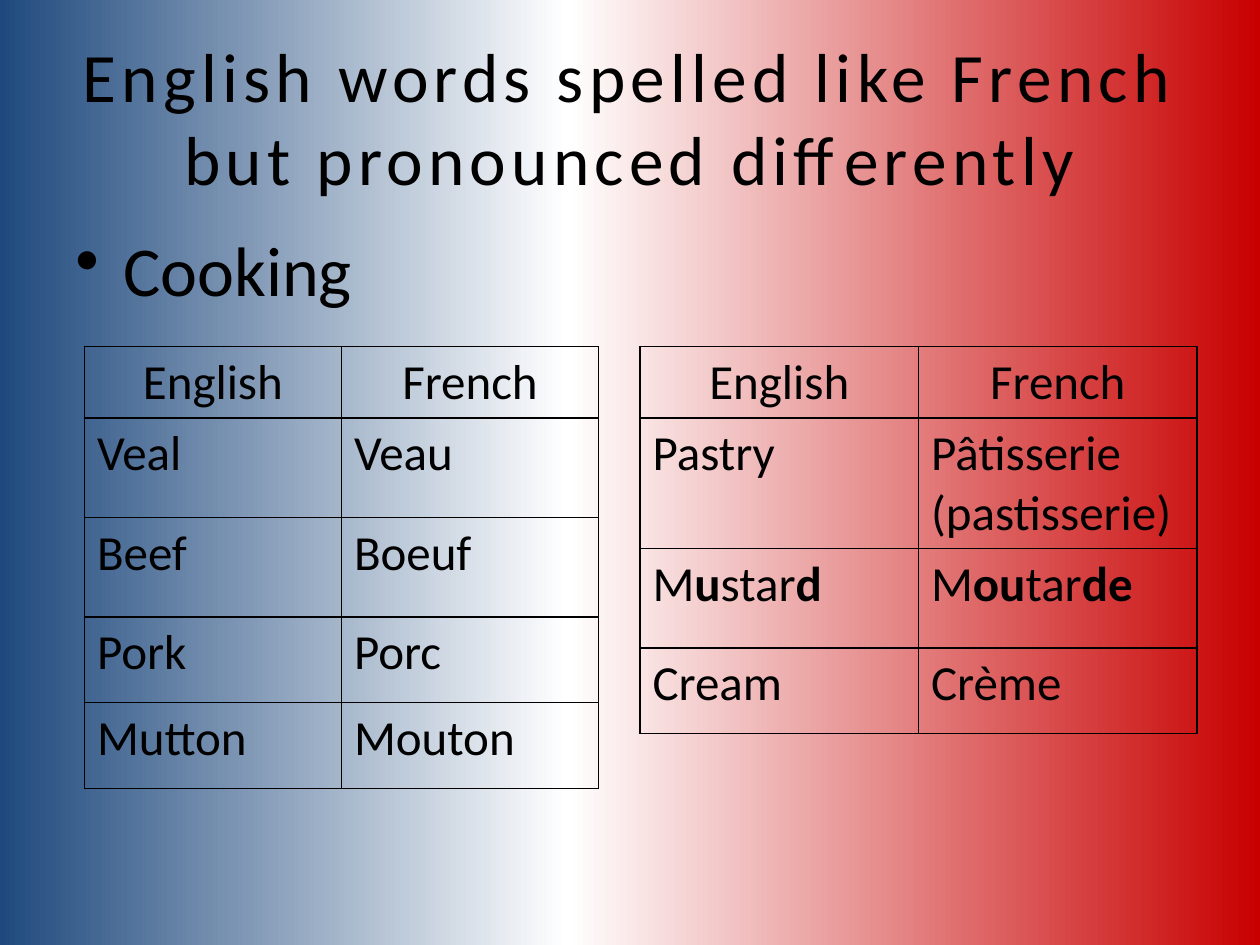
"""Build a slide comparing English and French cooking words."""
from copy import deepcopy

from lxml.etree import SubElement as Sub
from pptx import Presentation
from pptx.dml.color import RGBColor as RGB
from pptx.enum.text import MSO_ANCHOR as Anchor, PP_ALIGN as Align
from pptx.oxml.ns import qn
from pptx.util import Inches, Pt

COLORS = {"blue": "1F497D", "white": "FFFFFF", "red": "C80000", "ink": "000000"}


def style(para, size, align=Align.LEFT):
    para.alignment = align
    para.font.size = Pt(size)
    para.font.name = "Calibri"
    para.font.color.rgb = RGB.from_string(COLORS["ink"])


def border(cell):
    props = cell._tc.get_or_add_tcPr()
    for i, side in enumerate(("lnL", "lnR", "lnT", "lnB")):
        line = props.makeelement(qn(f"a:{side}"), {"w": str(Pt(1))})
        fill = Sub(line, qn("a:solidFill"))
        Sub(fill, qn("a:srgbClr"), val=COLORS["ink"])
        props.insert(i, line)


prs = Presentation()
prs.slide_width, prs.slide_height = Inches(10), Inches(7.5)
slide = prs.slides.add_slide(prs.slide_layouts[6])

back = slide.background.fill
back.gradient()
back.gradient_angle = 0
stops = back._fill._gradFill.gsLst
for extra in list(stops)[2:]:
    stops.remove(extra)
stops.insert(1, deepcopy(stops[0]))
for stop, name, pos in zip(back.gradient_stops, ("blue", "white", "red"), (0, 0.45, 1)):
    stop.color.rgb = RGB.from_string(COLORS[name])
    stop.position = pos

title = slide.shapes.add_textbox(Inches(0.5), Inches(0.3), Inches(9), Inches(1.25))
frame = title.text_frame
frame.word_wrap = True
frame.vertical_anchor = Anchor.MIDDLE
para = frame.paragraphs[0]
run = para.add_run()
run.text = "English words spelled like French but pronounced differently"
style(para, 39.6, Align.CENTER)
run.font._element.set("spc", "300")

body = slide.shapes.add_textbox(Inches(0.5), Inches(1.75), Inches(9), Inches(4.95))
frame = body.text_frame
frame.word_wrap = True
para = frame.paragraphs[0]
para.text = "Cooking"
para.space_before = Pt(8)
style(para, 40)
props = para._p.get_or_add_pPr()
props.set("marL", str(Inches(0.38)))
props.set("indent", str(Inches(-0.38)))
bullet = props.makeelement(qn("a:buChar"), {"char": "•"})
props.find(qn("a:defRPr")).addprevious(bullet)

HEAD = ("English", "French")
HIGHS = (0.56, 0.79, 0.79, 0.68, 0.68)
TABLES = [
    (0.67, 2.04, [HEAD, ("Veal", "Veau"), ("Beef", "Boeuf"),
                  ("Pork", "Porc"), ("Mutton", "Mouton")]),
    (5.08, 2.21, [HEAD, ("Pastry", "Pâtisserie\n(pastisserie)"),
                  ("M*u*star*d*", "M*ou*tar*de*"), ("Cream", "Crème")]),
]
for left, wide, rows in TABLES:
    highs = HIGHS[:len(rows)]
    table = slide.shapes.add_table(len(rows), 2, Inches(left), Inches(2.75),
                                   Inches(2 * wide), Inches(sum(highs))).table
    table.first_row = table.horz_banding = False
    for col in table.columns:
        col.width = Inches(wide)
    for r, (words, high) in enumerate(zip(rows, highs)):
        table.rows[r].height = Inches(high)
        for c, word in enumerate(words):
            cell = table.cell(r, c)
            cell.fill.background()
            border(cell)
            frame = cell.text_frame
            for n, text in enumerate(word.split("\n")):
                para = frame.add_paragraph() if n else frame.paragraphs[0]
                style(para, 28, Align.LEFT if r else Align.CENTER)
                for k, part in enumerate(text.split("*")):
                    if part:
                        run = para.add_run()
                        run.text = part
                        if k % 2:
                            run.font.bold = True

prs.save("out.pptx")
